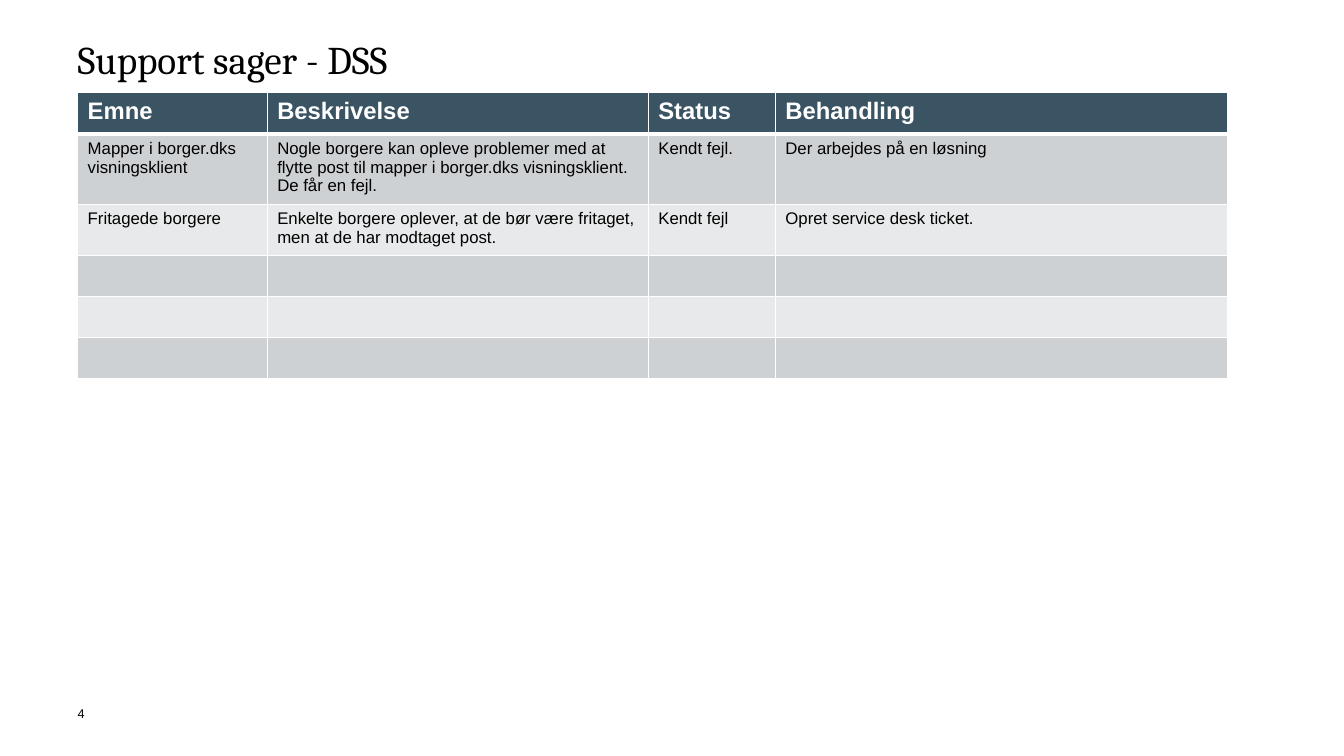
from lxml.etree import SubElement
from pptx import Presentation
from pptx.dml.color import RGBColor
from pptx.enum.text import MSO_ANCHOR, MSO_AUTO_SIZE, PP_ALIGN
from pptx.oxml.ns import qn
from pptx.util import Inches, Pt

COLORS = {
    "text": "000000",
    "white": "FFFFFF",
    "header": "3B5463",
    "odd": "CED1D3",
    "even": "E8E9EA",
}
COLUMN_WIDTHS = [1.88, 3.78, 1.26, 4.49]
ROW_HEIGHT = 0.41
CASES = [
    ["Emne", "Beskrivelse", "Status", "Behandling"],
    [
        "Mapper i borger.dks visningsklient",
        "Nogle borgere kan opleve problemer med at flytte post til mapper "
        "i borger.dks visningsklient. De får en fejl.",
        "Kendt fejl.",
        "Der arbejdes på en løsning",
    ],
    [
        "Fritagede borgere",
        "Enkelte borgere oplever, at de bør være fritaget, "
        "men at de har modtaget post.",
        "Kendt fejl",
        "Opret service desk ticket.",
    ],
] + [[""] * 4] * 3


def color(name):
    return RGBColor.from_string(COLORS[name])


def write(frame, text, size, font_name="Arial", color_name="text", bold=False):
    frame.text = text
    para = frame.paragraphs[0]
    para.alignment = PP_ALIGN.LEFT
    para.font.name = font_name
    para.font.size = Pt(size)
    para.font.bold = bold
    para.font.color.rgb = color(color_name)
    return para


def place(shape, left, top, width, height):
    shape.left, shape.top = Inches(left), Inches(top)
    shape.width, shape.height = Inches(width), Inches(height)


def set_margins(frame, right=0):
    frame.margin_left = frame.margin_top = frame.margin_bottom = 0
    frame.margin_right = Inches(right)
    frame.word_wrap = True
    frame.vertical_anchor = MSO_ANCHOR.TOP


def add_title(page, text):
    title = page.shapes.title
    place(title, 0.77, 0.4, 11.8, 1.02)
    frame = title.text_frame
    set_margins(frame, right=1.13)
    frame.auto_size = MSO_AUTO_SIZE.NONE
    write(frame, text, 28, "Cambria").line_spacing = 0.9


def add_page_number(page, number):
    box = page.shapes.add_textbox(Inches(0.77), Inches(7), Inches(0.31), Inches(0.3))
    set_margins(box.text_frame)
    write(box.text_frame, number, 9)


def set_borders(cell, top, bottom):
    """Draw white cell borders; top and bottom are widths in points."""
    properties = cell._tc.get_or_add_tcPr()
    for side, width in {"L": 1, "R": 1, "T": top, "B": bottom}.items():
        line = SubElement(properties, qn(f"a:ln{side}"), w=str(Pt(width)))
        fill = SubElement(line, qn("a:solidFill"))
        SubElement(fill, qn("a:srgbClr"), val=COLORS["white"])


def add_case_table(page):
    frame = page.shapes.add_table(
        len(CASES), len(COLUMN_WIDTHS), Inches(0.77), Inches(0.92),
        Inches(sum(COLUMN_WIDTHS)), Inches(ROW_HEIGHT * len(CASES)),
    )
    table = frame.table
    for column, width in zip(table.columns, COLUMN_WIDTHS):
        column.width = Inches(width)
    for row_index, texts in enumerate(CASES):
        table.rows[row_index].height = Inches(ROW_HEIGHT)
        is_header = row_index == 0
        fill_name = "header" if is_header else "odd" if row_index % 2 else "even"
        for column_index, text in enumerate(texts):
            cell = table.cell(row_index, column_index)
            set_borders(cell, 3 if row_index == 1 else 1, 3 if is_header else 1)
            cell.fill.solid()
            cell.fill.fore_color.rgb = color(fill_name)
            if is_header:
                write(cell.text_frame, text, 17, color_name="white", bold=True)
            else:
                write(cell.text_frame, text, 12)


def main():
    deck = Presentation()
    deck.slide_width, deck.slide_height = Inches(13.33), Inches(7.5)
    page = deck.slides.add_slide(deck.slide_layouts[5])
    add_page_number(page, "4")
    add_title(page, "Support sager - DSS")
    add_case_table(page)
    deck.save("out.pptx")


if __name__ == "__main__":
    main()
